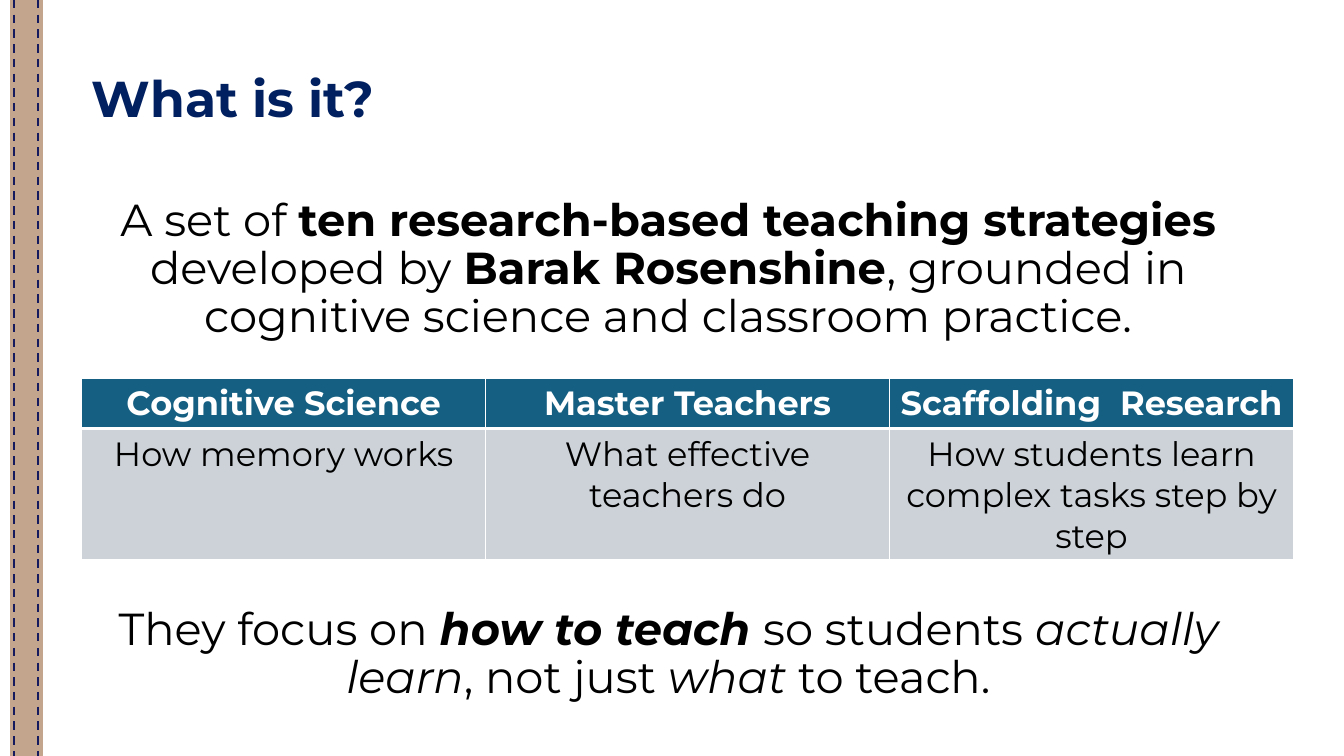
from dataclasses import dataclass

from lxml import etree
from pptx import Presentation
from pptx.dml.color import RGBColor
from pptx.enum import dml, shapes, text
from pptx.oxml import ns
from pptx.util import Inches, Pt


@dataclass(frozen=True)
class Theme:
    font: str = "Montserrat"
    tan: str = "C3A48C"
    stitch: str = "15195D"
    navy: str = "002060"
    teal: str = "156082"
    grey: str = "CCD2D8"
    white: str = "FFFFFF"
    black: str = "000000"
    title: int = 36
    body: int = 32
    table: int = 24


THEME = Theme()
PAGE_HEIGHT = 7.5
SOURCES = [
    ("Cognitive Science", "How memory works"),
    ("Master Teachers", "What effective teachers do"),
    ("Scaffolding  Research", "How students learn complex tasks step by step"),
]


def color(value):
    return RGBColor.from_string(value)


def style_font(para, size, value):
    para.font.name = THEME.font
    para.font.size = Pt(size)
    para.font.color.rgb = color(value)


def add_ribbon(page):
    band = page.shapes.add_shape(
        shapes.MSO_SHAPE.RECTANGLE, Inches(0.1), 0, Inches(0.32), Inches(PAGE_HEIGHT))
    band.shadow.inherit = False
    band.fill.solid()
    band.fill.fore_color.rgb = color(THEME.tan)
    band.line.color.rgb = color(THEME.tan)
    band.line.width = Pt(0.75)
    for x in (0.14, 0.38):
        add_stitch(page, x)


def add_stitch(page, x):
    stitch = page.shapes.add_connector(
        shapes.MSO_CONNECTOR.STRAIGHT, Inches(x), 0, Inches(x), Inches(PAGE_HEIGHT))
    stitch.line.color.rgb = color(THEME.stitch)
    stitch.line.width = Pt(1.5)
    stitch.line.dash_style = dml.MSO_LINE.DASH
    etree.SubElement(stitch._element.spPr, ns.qn("a:effectLst"))


def add_text(page, area, spans, size, value, align):
    box = page.shapes.add_textbox(*(Inches(length) for length in area))
    box.text_frame.word_wrap = True
    para = box.text_frame.paragraphs[0]
    para.alignment = align
    para.line_spacing = 0.9
    style_font(para, size, value)
    for words, marks in spans:
        span = para.add_run()
        span.text = words
        if "b" in marks:
            span.font.bold = True
        if "i" in marks:
            span.font.italic = True


def set_borders(cell, bottom):
    properties = cell._tc.get_or_add_tcPr()
    sides = (("lnL", 1), ("lnR", 1), ("lnT", 1), ("lnB", bottom))
    for index, (side, width) in enumerate(sides):
        border = etree.Element(ns.qn(f"a:{side}"), w=str(Pt(width)))
        fill = etree.SubElement(border, ns.qn("a:solidFill"))
        etree.SubElement(fill, ns.qn("a:srgbClr"), val=THEME.white)
        properties.insert(index, border)


def fill_cell(cell, words, fill, value, bold, bottom):
    cell.fill.solid()
    cell.fill.fore_color.rgb = color(fill)
    cell.text = words
    para = cell.text_frame.paragraphs[0]
    para.alignment = text.PP_ALIGN.CENTER
    style_font(para, THEME.table, value)
    para.font.bold = bold
    set_borders(cell, bottom)


def add_sources(page):
    frame = page.shapes.add_table(
        2, len(SOURCES), Inches(0.81), Inches(3.75), Inches(12.02), Inches(1.8))
    table = frame.table
    table.rows[0].height = Inches(0.5)
    table.rows[1].height = Inches(1.3)
    for index, (heading, detail) in enumerate(SOURCES):
        fill_cell(table.cell(0, index), heading, THEME.teal, THEME.white, True, 3)
        fill_cell(table.cell(1, index), detail, THEME.grey, THEME.black, False, 1)
        set_top = table.cell(1, index)._tc.tcPr.find(ns.qn("a:lnT"))
        set_top.set("w", str(Pt(3)))


def main():
    deck = Presentation()
    deck.slide_width = Inches(13.33)
    deck.slide_height = Inches(PAGE_HEIGHT)
    page = deck.slides.add_slide(deck.slide_layouts[6])
    add_ribbon(page)
    add_text(page, (0.81, 0.68, 8.29, 0.81), [("What is it?", "b")],
             THEME.title, THEME.navy, text.PP_ALIGN.LEFT)
    definition = [
        ("A set of ", ""),
        ("ten research-based teaching strategies ", "b"),
        ("developed by ", ""),
        ("Barak Rosenshine", "b"),
        (", grounded in cognitive science and classroom practice.", ""),
    ]
    focus = [
        ("They focus on ", ""),
        ("how to teach ", "bi"),
        ("so students ", ""),
        ("actually learn", "i"),
        (", not just ", ""),
        ("what", "i"),
        (" to teach.", ""),
    ]
    for top, height, spans in ((1.91, 1.6, definition), (5.97, 1.2, focus)):
        add_text(page, (0.81, top, 11.64, height), spans,
                 THEME.body, THEME.black, text.PP_ALIGN.CENTER)
    add_sources(page)
    deck.save("out.pptx")


if __name__ == "__main__":
    main()
